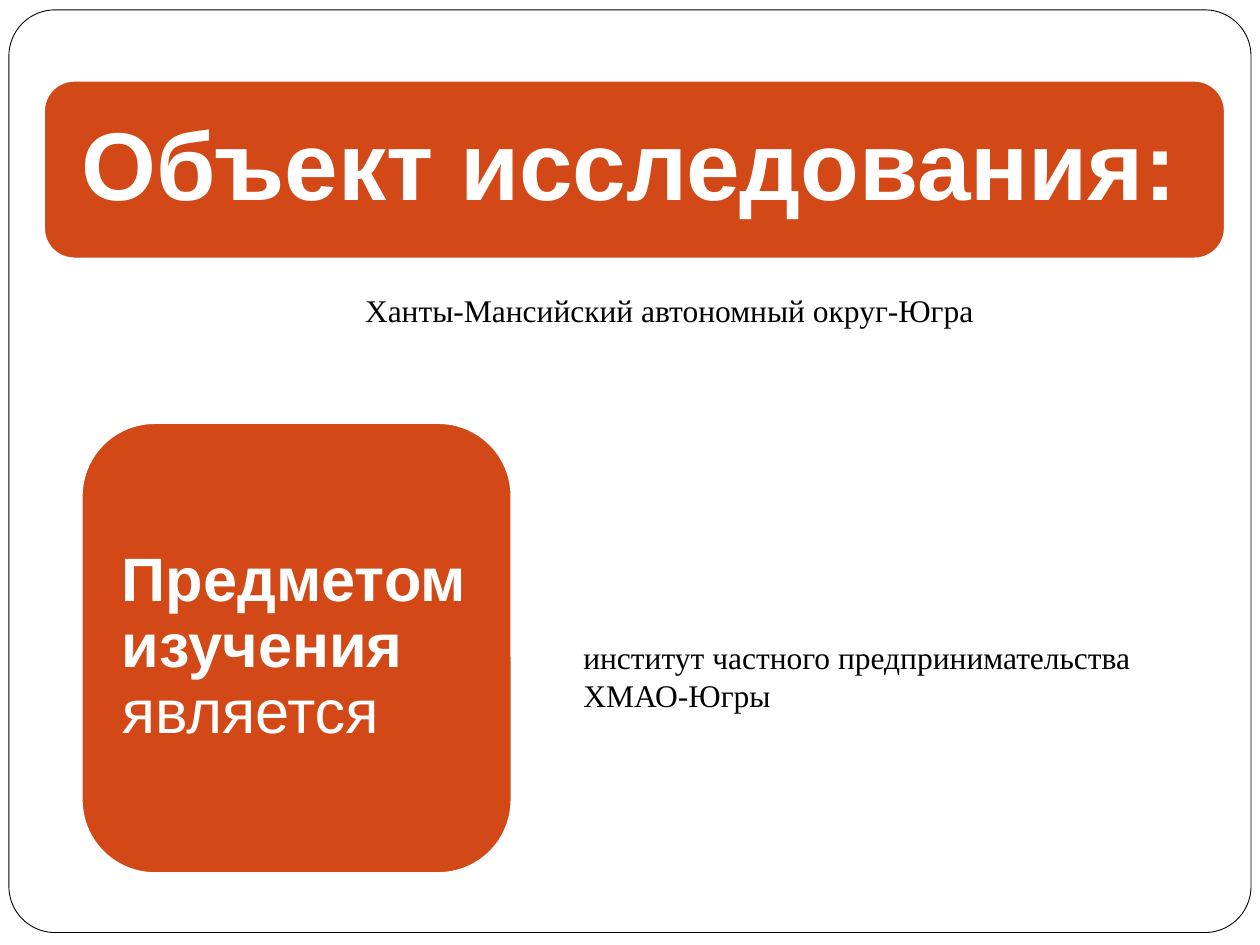
"""Build a slide naming the object and the subject of a study."""
from pptx import Presentation
from pptx.dml.color import RGBColor
from pptx.enum.shapes import MSO_SHAPE
from pptx.enum.text import MSO_ANCHOR, MSO_AUTO_SIZE, PP_ALIGN
from pptx.util import Cm, Pt

RUST = RGBColor(0xD3, 0x48, 0x17)
WHITE = RGBColor(0xFF, 0xFF, 0xFF)
BLACK = RGBColor(0x00, 0x00, 0x00)


def add_panel(box, fill, line, width, round_by):
    panel = slide.shapes.add_shape(MSO_SHAPE.ROUNDED_RECTANGLE, *map(Cm, box))
    panel.adjustments[0] = round_by
    panel.shadow.inherit = False
    panel.fill.solid()
    panel.fill.fore_color.rgb = fill
    panel.line.color.rgb = line
    panel.line.width = Pt(width)


def set_text(shape, parts, font, size, color, inset, anchor, spacing):
    frame = shape.text_frame
    frame.word_wrap = True
    frame.auto_size = MSO_AUTO_SIZE.NONE
    frame.vertical_anchor = anchor
    frame.margin_left = frame.margin_right = Cm(inset[0])
    frame.margin_top = frame.margin_bottom = Cm(inset[1])
    para = frame.paragraphs[0]
    para.alignment = PP_ALIGN.LEFT
    para.line_spacing = spacing
    para.font.name = font
    para.font.size = Pt(size)
    para.font.color.rgb = color
    for words, bold in parts:
        run = para.add_run()
        run.text = words
        run.font.bold = bold


deck = Presentation()
deck.slide_width, deck.slide_height = Cm(25.4), Cm(19.05)
slide = deck.slides.add_slide(deck.slide_layouts[5])

add_panel((0.18, 0.2, 25.04, 18.6), WHITE, BLACK, 0.5, 0.05)
add_panel((0.89, 1.63, 23.8, 3.58), RUST, WHITE, 1, 0.17)
add_panel((1.65, 8.53, 8.66, 9.07), RUST, WHITE, 1, 0.17)

title = slide.shapes.title
title.element.getparent().append(title.element)
title.left, title.top, title.width, title.height = map(Cm, (1.07, 1.8, 23.44, 3.23))
set_text(title, [("Объект исследования:", True)], "Arial", 55, WHITE,
         (0.58, 0.58), MSO_ANCHOR.MIDDLE, 0.9)

label = slide.shapes.add_textbox(*map(Cm, (2.08, 8.94, 7.8, 8.23)))
set_text(label, [("Предметом изучения", True), (" является", False)], "Arial", 35,
         WHITE, (0.38, 0.38), MSO_ANCHOR.MIDDLE, 0.9)

notes = [
    ((7.11, 5.74, 17.09, 1.02), "Ханты-Мансийский автономный округ-Югра"),
    ((11.51, 12.73, 12.7, 1.8), "институт частного предпринимательства ХМАО-Югры"),
]
for box, words in notes:
    note = slide.shapes.add_textbox(*map(Cm, box))
    set_text(note, [(words, False)], "Times New Roman", 18, BLACK,
             (0.25, 0.13), MSO_ANCHOR.TOP, 1.0)

deck.save("out.pptx")
